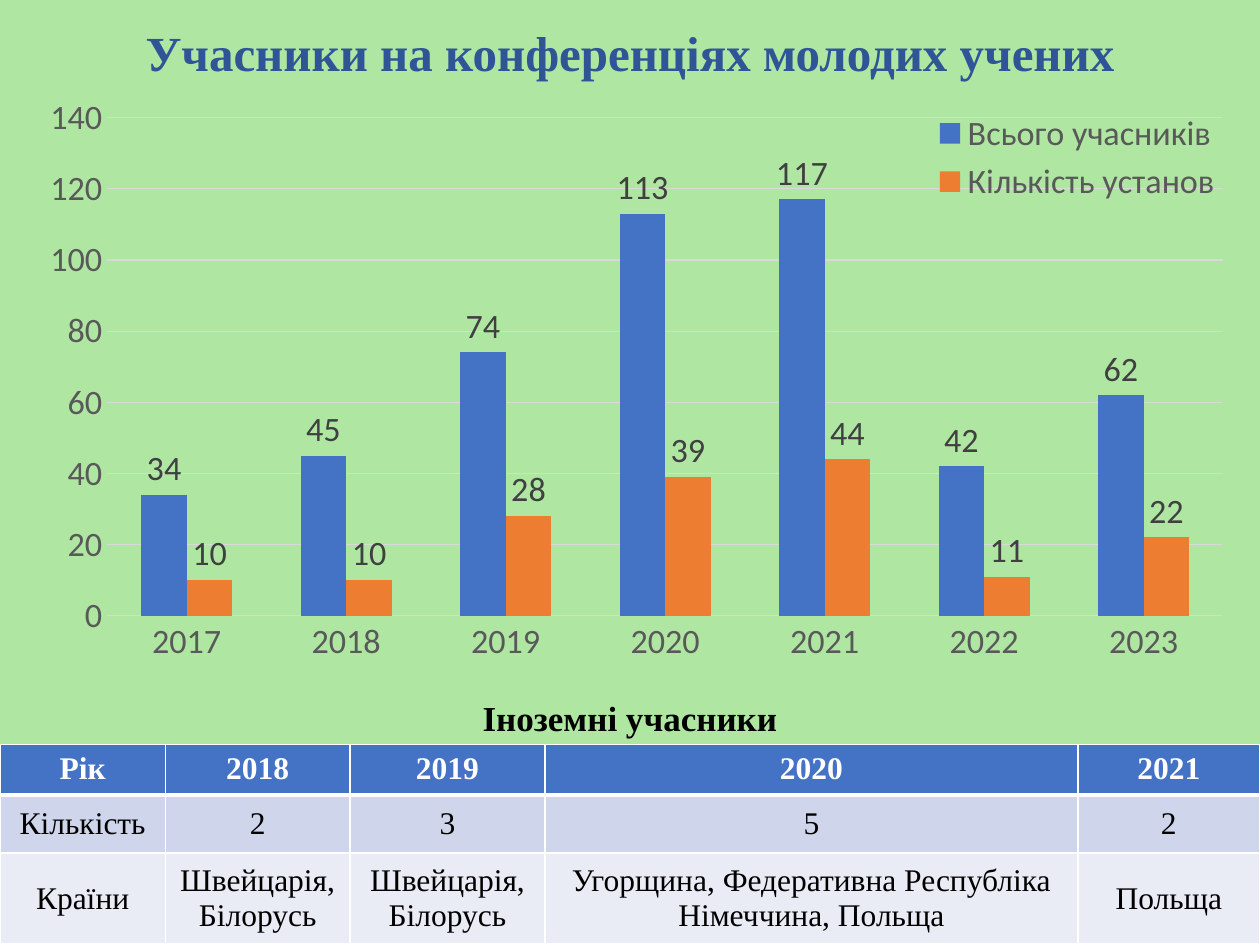
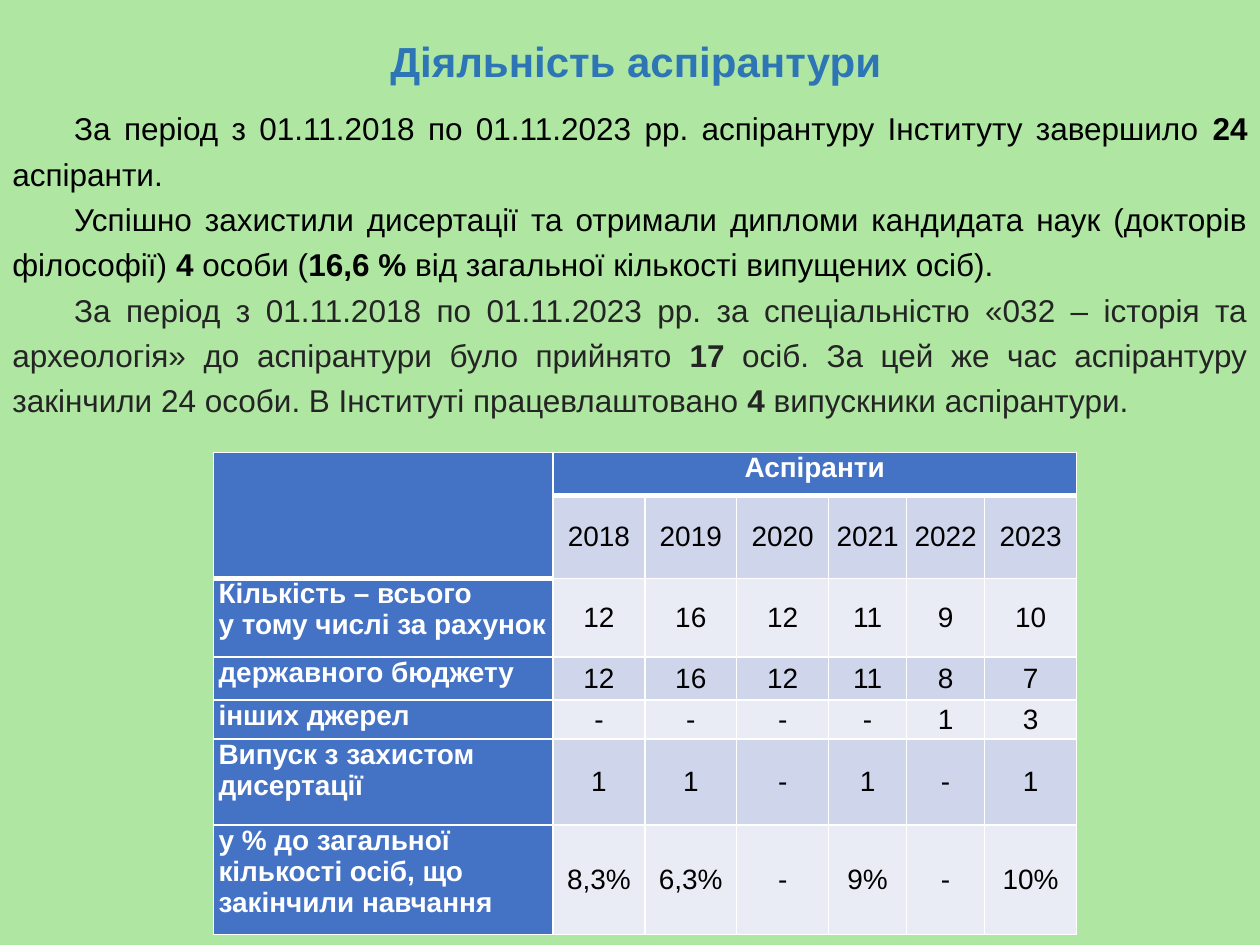
"""Build two slides on young scholars' conferences and postgraduate study."""
from lxml import etree
from pptx import Presentation
from pptx.chart.data import CategoryChartData
from pptx.dml.color import RGBColor
from pptx.enum.chart import (XL_CHART_TYPE, XL_LABEL_POSITION,
                             XL_LEGEND_POSITION, XL_TICK_MARK)
from pptx.enum.text import MSO_ANCHOR, PP_ALIGN
from pptx.oxml.ns import qn
from pptx.util import Pt

COLUMN = XL_CHART_TYPE.COLUMN_CLUSTERED
OUTER = XL_LABEL_POSITION.OUTSIDE_END
RIGHT = XL_LEGEND_POSITION.RIGHT
NOTICK = XL_TICK_MARK.NONE
TOP, MIDDLE = MSO_ANCHOR.TOP, MSO_ANCHOR.MIDDLE
LEFT, CENTER, JUSTIFY = PP_ALIGN.LEFT, PP_ALIGN.CENTER, PP_ALIGN.JUSTIFY

COLORS = {
    "back": "AFE6A2", "black": "000000", "white": "FFFFFF", "ink": "242424",
    "navy": "2F5597", "sky": "2E75B6", "blue": "4472C4", "orange": "ED7D31",
    "band": "CFD5EA", "pale": "E9EBF5",
    "axis": "595959", "label": "404040", "grid": "D9D9D9",
}
TIMES, ARIAL, CALIBRI = "Times New Roman", "Arial", "Calibri"


def color(name):
    """Return the named colour."""
    return RGBColor.from_string(COLORS[name])


def style(font, face, size, tint, bold=None):
    """Set the face, size, colour and weight of a font."""
    font.name, font.size, font.bold = face, Pt(size), bold
    font.color.rgb = color(tint)


def place(node, index, box, inner=False):
    """Give a chart part a manual layout in fractions of the chart."""
    for old in node.findall(qn("c:layout")):
        node.remove(old)
    layout = etree.Element(qn("c:layout"))
    manual = etree.SubElement(layout, qn("c:manualLayout"))
    pairs = [("layoutTarget", "inner")] if inner else []
    pairs += [("xMode", "edge"), ("yMode", "edge"), *zip("xywh", box)]
    for tag, val in pairs:
        etree.SubElement(manual, qn(f"c:{tag}")).set("val", str(val))
    node.insert(index, layout)


def border(cell, top, bottom):
    """Draw white cell borders with the given top and bottom widths."""
    props = cell._tc.get_or_add_tcPr()
    for i, (side, width) in enumerate(zip("LRTB", (1, 1, top, bottom))):
        line = etree.Element(qn(f"a:ln{side}"), w=str(Pt(width)))
        fill = etree.SubElement(line, qn("a:solidFill"))
        etree.SubElement(fill, qn("a:srgbClr")).set("val", COLORS["white"])
        props.insert(i, line)


class Deck:
    """Hold the presentation, its style and the current slide."""

    def __init__(self):
        """Open an empty deck of 10 by 7.5 inches."""
        self.show = Presentation()
        self.show.slide_width, self.show.slide_height = Pt(720), Pt(540)
        self.slide = None

    def page(self):
        """Start a slide with the shared background."""
        self.slide = self.show.slides.add_slide(self.show.slide_layouts[6])
        fill = self.slide.background.fill
        fill.solid()
        fill.fore_color.rgb = color("back")

    def text(self, top, height, items, face, size, align=CENTER,
             bold=None, space=None, indent=0):
        """Add a full-width box of (text, colour) items; stars mark bold."""
        box = self.slide.shapes.add_textbox(0, Pt(top), Pt(720), Pt(height))
        frame = box.text_frame
        frame.word_wrap = True
        for i, (words, tint) in enumerate(items):
            para = frame.paragraphs[0] if i == 0 else frame.add_paragraph()
            para.alignment, para.line_spacing = align, space
            if indent:
                para._p.get_or_add_pPr().set("indent", str(Pt(indent)))
            style(para.font, face, size, tint, bold)
            for j, part in enumerate(words.split("*")):
                run = para.add_run()
                run.text = part
                if j % 2:
                    run.font.bold = True

    def chart(self, top, height, cats, series):
        """Add a full-width column chart of (name, colour, values) series."""
        data = CategoryChartData()
        data.categories = cats
        for name, _, vals in series:
            data.add_series(name, vals)
        chart = self.slide.shapes.add_chart(
            COLUMN, 0, Pt(top), Pt(720), Pt(height), data).chart
        chart.has_title = False
        style(chart.font, CALIBRI, 19.5, "axis")
        plot = chart.plots[0]
        plot.gap_width, plot.overlap, plot.vary_by_categories = 150, 0, False
        for item, (_, tint, _) in zip(plot.series, series):
            item.format.fill.solid()
            item.format.fill.fore_color.rgb = color(tint)
            labels = item.data_labels
            labels.show_value, labels.position = True, OUTER
            style(labels.font, CALIBRI, 19.5, "label")
        base, scale = chart.category_axis, chart.value_axis
        for axis in (base, scale):
            axis.major_tick_mark = axis.minor_tick_mark = NOTICK
            style(axis.tick_labels.font, CALIBRI, 19.5, "axis")
        scale.minimum_scale, scale.maximum_scale = 0, 140
        scale.major_unit = 20
        scale.format.line.fill.background()
        for line in (base.format.line, scale.major_gridlines.format.line):
            line.color.rgb, line.width = color("grid"), Pt(0.66)
        chart.has_legend = True
        legend = chart.legend
        legend.position, legend.include_in_layout = RIGHT, True
        style(legend.font, CALIBRI, 19.5, "axis")
        place(legend._element, 1, (0.73, 0.03, 0.25, 0.17))
        place(plot._element.getparent(), 0, (0.085, 0.049, 0.886, 0.827), True)

    def table(self, left, top, cols, rows, data, face, size,
              pad=(7.2, 3.6), side=False, spans=()):
        """Add a banded table; side makes the first column a header."""
        grid = self.slide.shapes.add_table(
            len(rows), len(cols), Pt(left), Pt(top),
            Pt(sum(cols)), Pt(sum(rows))).table
        for col, width in zip(grid.columns, cols):
            col.width = Pt(width)
        for row, height in zip(grid.rows, rows):
            row.height = Pt(height)
        for start, end in spans:
            grid.cell(*start).merge(grid.cell(*end))
        for r, line in enumerate(data):
            for c, words in enumerate(line):
                stub = side and c == 0
                head = r == 0 or stub
                last = 1 if stub else 0
                cell = grid.cell(r, c)
                cell.fill.solid()
                cell.fill.fore_color.rgb = color(
                    "blue" if head else "band" if r % 2 else "pale")
                cell.margin_left = cell.margin_right = Pt(pad[0])
                cell.margin_top = cell.margin_bottom = Pt(pad[1])
                cell.vertical_anchor = TOP if head else MIDDLE
                cell.text_frame.text = words
                for para in cell.text_frame.paragraphs:
                    para.alignment = LEFT if stub else CENTER
                    style(para.font, face, size,
                          "white" if head else "black", head)
                border(cell, 3 if r == last + 1 else 1, 3 if r <= last else 1)


def meetings(deck):
    """Build the slide on conference participants."""
    deck.page()
    deck.chart(50.4, 344.2, [str(year) for year in range(2017, 2024)], [
        ("Всього учасників", "blue", (34, 45, 74, 113, 117, 42, 62)),
        ("Кількість установ", "orange", (10, 10, 28, 39, 44, 11, 22)),
    ])
    deck.text(9.4, 41, [("Учасники на конференціях молодих учених", "navy")],
              TIMES, 28, bold=True)
    deck.table(0, 425.5, (94.5, 105.5, 111.5, 304.5, 104), (27, 33, 52), [
        ("Рік", "2018", "2019", "2020", "2021"),
        ("Кількість", "2", "3", "5", "2"),
        ("Країни", "Швейцарія, Білорусь", "Швейцарія, Білорусь",
         "Угорщина, Федеративна Республіка Німеччина, Польща", "Польща"),
    ], TIMES, 18)
    deck.text(394.6, 31.7, [("Іноземні учасники", "black")],
              TIMES, 20, bold=True)


def studies(deck):
    """Build the slide on postgraduate study."""
    deck.page()
    deck.table(
        122, 258.5, (194, 52.5, 52.5, 52.5, 44.6, 44.6, 52.5),
        (24.5, 47.5, 45, 24.5, 22.5, 49, 62.5), [
            ("", "Аспіранти", "", "", "", "", ""),
            ("", "2018", "2019", "2020", "2021", "2022", "2023"),
            ("Кількість – всього\nу тому числі за рахунок",
             "12", "16", "12", "11", "9", "10"),
            ("державного бюджету", "12", "16", "12", "11", "8", "7"),
            ("інших джерел", "-", "-", "-", "-", "1", "3"),
            ("Випуск з захистом дисертації", "1", "1", "-", "1", "-", "1"),
            ("у % до загальної кількості осіб, що закінчили навчання",
             "8,3%", "6,3%", "-", "9%", "-", "10%"),
        ], ARIAL, 16, pad=(2.9, 0), side=True,
        spans=[((0, 0), (1, 0)), ((0, 1), (0, 6))])
    deck.text(2.2, 45.4, [(" *Діяльність аспірантури", "sky")],
              ARIAL, 24, space=1.5)
    deck.text(54.7, 188, [
        ("За період з 01.11.2018 по 01.11.2023 рр. аспірантуру Інституту "
         "завершило *24* аспіранти.", "black"),
        ("Успішно захистили дисертації та отримали дипломи кандидата наук "
         "(докторів філософії) *4* особи (*16,6 %* від загальної кількості "
         "випущених осіб).", "black"),
        ("За період з 01.11.2018 по 01.11.2023 рр. за спеціальністю «032 – "
         "історія та археологія» до аспірантури було прийнято *17* осіб. "
         "За цей же час аспірантуру закінчили 24 особи. В Інституті "
         "працевлаштовано *4* випускники аспірантури.", "ink"),
    ], ARIAL, 18, align=JUSTIFY, space=1.2, indent=35.3)


def main():
    """Build and save the deck."""
    deck = Deck()
    meetings(deck)
    studies(deck)
    deck.show.save("out.pptx")


if __name__ == "__main__":
    main()
